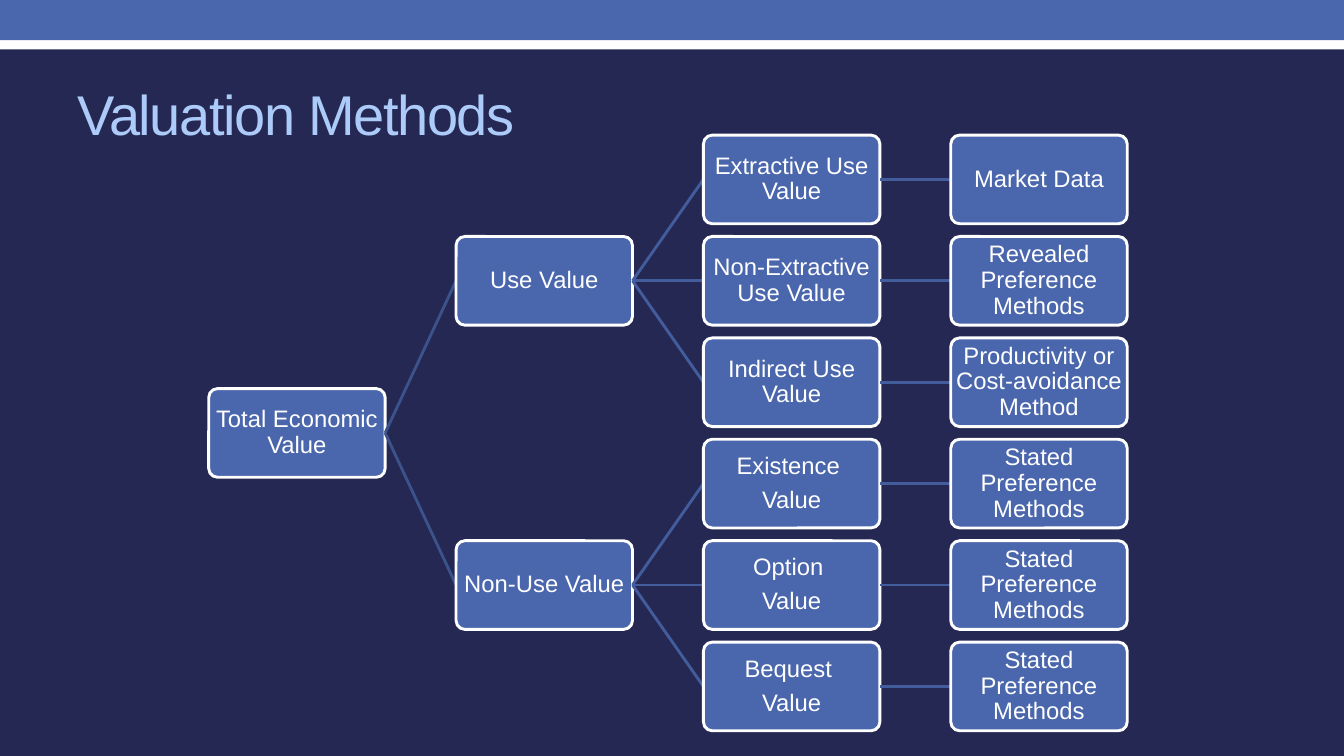
from pptx import Presentation
from pptx.dml.color import RGBColor
from pptx.enum.shapes import MSO_CONNECTOR, MSO_SHAPE
from pptx.enum.text import MSO_ANCHOR, PP_ALIGN
from pptx.oxml.ns import qn
from pptx.util import Inches, Pt
from lxml.etree import SubElement

COLORS = {
    "background": "242852",
    "blue": "4A66AC",
    "white": "FFFFFF",
    "title": "ACCBF9",
    "first_link": "3B528A",
    "link": "435D9C",
}
BOX_WIDTH, BOX_HEIGHT = 1.75, 0.88
LEFT, COLUMN_PITCH = 2.07, (9.43 - 2.07) / 3
TOP, ROW_PITCH = 1.34, (6.37 - 1.34) / 5
LINE_WIDTH = Pt(2.08)

BRANCHES = {
    "Use Value": [
        ("Extractive Use Value", "Market Data"),
        ("Non-Extractive Use Value", "Revealed Preference Methods"),
        ("Indirect Use Value", "Productivity or Cost-avoidance Method"),
    ],
    "Non-Use Value": [
        ("Existence \nValue", "Stated Preference Methods"),
        ("Option \nValue", "Stated Preference Methods"),
        ("Bequest \nValue", "Stated Preference Methods"),
    ],
}


def color(name):
    """Return the named colour."""
    return RGBColor.from_string(COLORS[name])


def write_text(shape, text, size, color_name, align=PP_ALIGN.LEFT, margin=0.1,
               line_spacing=1.0, space_after=0, tracking=0):
    """Fill a shape with one formatted paragraph for each line of text."""
    frame = shape.text_frame
    frame.word_wrap = True
    frame.vertical_anchor = MSO_ANCHOR.MIDDLE
    frame.margin_left = frame.margin_right = Inches(margin)
    frame.margin_top = frame.margin_bottom = Inches(margin)
    frame.text = text
    for paragraph in frame.paragraphs:
        paragraph.alignment = align
        paragraph.line_spacing = line_spacing
        paragraph.space_after = Pt(space_after)
        for run in paragraph.runs:
            run.font.name = "Arial"
            run.font.size = Pt(size)
            run.font.color.rgb = color(color_name)
            run._r.get_or_add_rPr().set("spc", str(tracking * 100))


def add_band(slide, top, height, color_name):
    """Draw a plain band across the slide."""
    band = slide.shapes.add_shape(
        MSO_SHAPE.RECTANGLE, 0, Inches(top), Inches(13.33), Inches(height))
    band.shadow.inherit = False
    band.fill.solid()
    band.fill.fore_color.rgb = color(color_name)
    band.line.fill.background()


def add_title(slide, text):
    """Write the slide title."""
    title = slide.shapes.add_textbox(
        Inches(0.67), Inches(0.58), Inches(12), Inches(1.08))
    write_text(title, text, size=40, color_name="title", tracking=-1)


def add_box(slide, text, column, row):
    """Draw a rounded box at a grid position."""
    box = slide.shapes.add_shape(
        MSO_SHAPE.ROUNDED_RECTANGLE,
        Inches(LEFT + column * COLUMN_PITCH), Inches(TOP + row * ROW_PITCH),
        Inches(BOX_WIDTH), Inches(BOX_HEIGHT))
    box.adjustments[0] = 0.1
    box.shadow.inherit = False
    box.fill.solid()
    box.fill.fore_color.rgb = color("blue")
    box.line.color.rgb = color("white")
    box.line.width = LINE_WIDTH
    write_text(box, text, size=17, color_name="white", align=PP_ALIGN.CENTER,
               margin=0.01, line_spacing=0.9, space_after=6)
    return box


def add_child(slide, parent, text, column, row, link_color="link"):
    """Draw a box in front of the line that joins it to its parent."""
    link = slide.shapes.add_connector(MSO_CONNECTOR.STRAIGHT, 0, 0, 0, 0)
    SubElement(link._element.spPr, qn("a:effectLst"))
    link.line.color.rgb = color(link_color)
    link.line.width = LINE_WIDTH
    child = add_box(slide, text, column, row)
    link.begin_connect(parent, 3)
    link.end_connect(child, 1)
    return child


def add_tree(slide):
    """Draw the value tree, with each branch centred on its rows."""
    root = add_box(slide, "Total Economic Value", 0, 2.5)
    first_row = 0
    for branch_name, leaves in BRANCHES.items():
        middle = first_row + (len(leaves) - 1) / 2
        branch = add_child(slide, root, branch_name, 1, middle, "first_link")
        for row, (value, method) in enumerate(leaves, first_row):
            value_box = add_child(slide, branch, value, 2, row)
            add_child(slide, value_box, method, 3, row)
        first_row += len(leaves)


def main():
    """Build and save the slide."""
    presentation = Presentation()
    presentation.slide_width = Inches(13.33)
    presentation.slide_height = Inches(7.5)
    slide = presentation.slides.add_slide(presentation.slide_layouts[6])
    slide.background.fill.solid()
    slide.background.fill.fore_color.rgb = color("background")
    add_band(slide, 0.24, 0.25, "white")
    add_band(slide, 0, 0.4, "blue")
    add_title(slide, "Valuation Methods")
    add_tree(slide)
    presentation.save("out.pptx")


if __name__ == "__main__":
    main()
